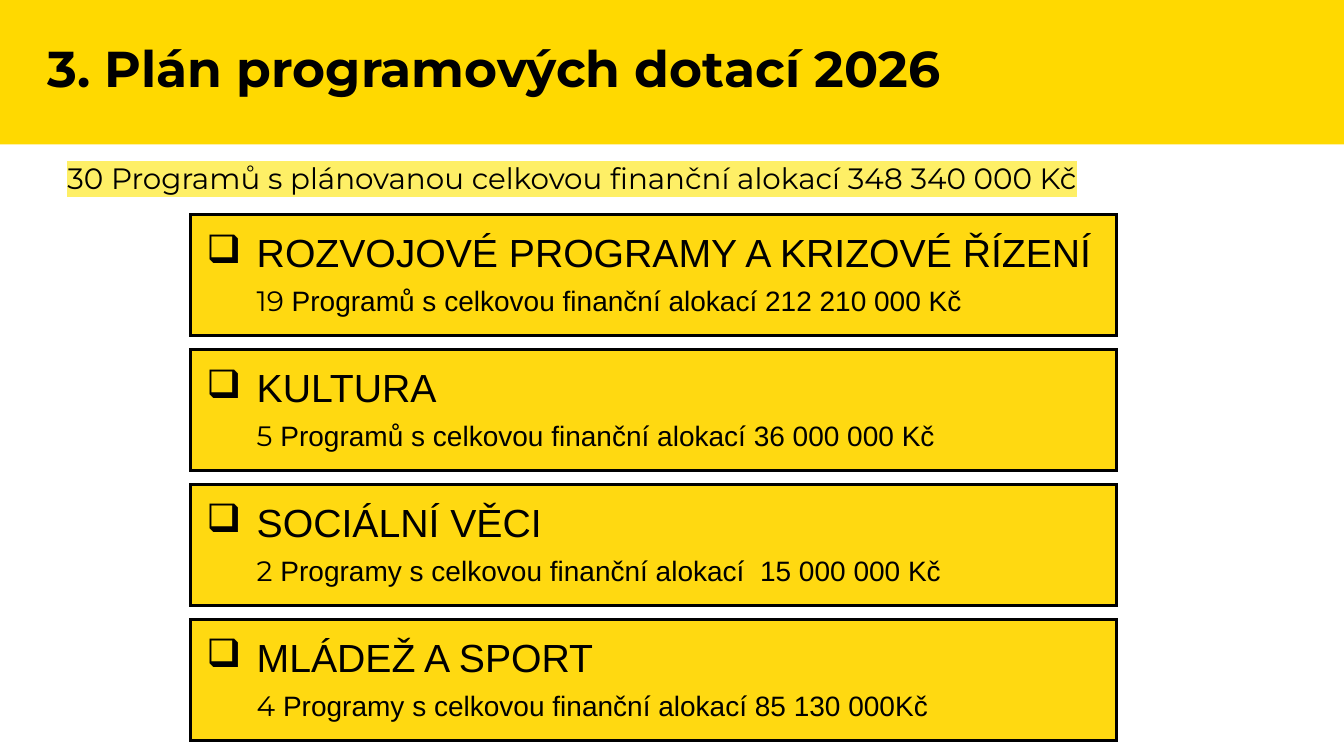
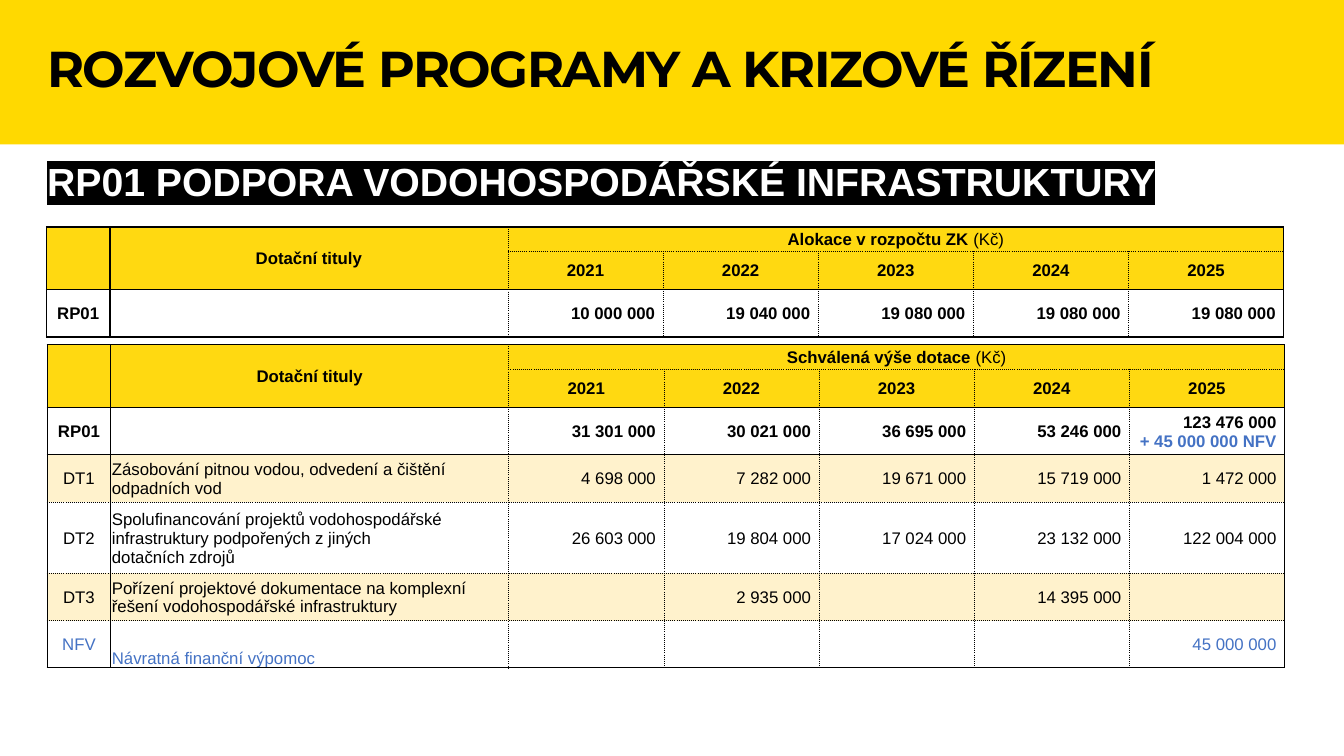
import dataclasses

import lxml.etree
import pptx
import pptx.dml.color
import pptx.enum.shapes
import pptx.enum.text
import pptx.oxml.ns
import pptx.util

Cm = pptx.util.Cm
Pt = pptx.util.Pt
qn = pptx.oxml.ns.qn
rgb = pptx.dml.color.RGBColor.from_string
Align = pptx.enum.text.PP_ALIGN
Anchor = pptx.enum.text.MSO_ANCHOR


@dataclasses.dataclass(frozen=True)
class Theme:
    band: str = "FFD900"
    panel: str = "FFD911"
    stripe: str = "FFF2CC"
    marker: str = "FEEF66"
    black: str = "000000"
    white: str = "FFFFFF"
    blue: str = "4472C4"
    display: str = "Montserrat"
    body: str = "Arial"
    title_size: float = 36
    heading_size: float = 28
    lead_size: float = 21
    detail_size: float = 20
    table_size: float = 12


theme = Theme()
SOLID, DOTTED, FINE = (1, "solid"), (0.5, "dot"), (0.25, "sysDot")
FRAME = (2.25, "solid")


def write(para, text, size=theme.table_size, font=theme.body, color=theme.black,
          bold=False, highlight=None, spacing=None):
    """Add formatted text to a paragraph; a vertical tab breaks the line."""
    for index, part in enumerate(text.split("\v")):
        if index:
            para.add_line_break()
        span = para.add_run()
        span.text = part
        span.font.size = Pt(size)
        span.font.bold = bold
        span.font.color.rgb = rgb(color)
        properties = span.font._element
        if highlight:
            mark = lxml.etree.SubElement(properties, qn("a:highlight"))
            lxml.etree.SubElement(mark, qn("a:srgbClr"), val=highlight)
        if spacing:
            properties.set("spc", str(spacing * 100))
        span.font.name = font


def style_cell(cell, fill, margins, left, right, top, bottom):
    """Set fill, margins (left, right, top, bottom in cm) and borders (points, dash)."""
    cell.fill.solid()
    cell.fill.fore_color.rgb = rgb(fill)
    cell.vertical_anchor = Anchor.MIDDLE
    (cell.margin_left, cell.margin_right,
     cell.margin_top, cell.margin_bottom) = map(Cm, margins)
    properties = cell._tc.get_or_add_tcPr()
    borders = {"L": left, "R": right, "T": top, "B": bottom}
    for index, (side, (width, dash)) in enumerate(borders.items()):
        line = lxml.etree.Element(qn("a:ln" + side), w=str(Pt(width)))
        paint = lxml.etree.SubElement(line, qn("a:solidFill"))
        lxml.etree.SubElement(paint, qn("a:srgbClr"), val=theme.black)
        lxml.etree.SubElement(line, qn("a:prstDash"), val=dash)
        properties.insert(index, line)


deck = pptx.Presentation()
deck.slide_width, deck.slide_height = Cm(33.87), Cm(19.05)

# Shared layout: title place and yellow band
layout = deck.slide_layouts[5]
title = layout.placeholders[0]
title.left, title.top, title.width, title.height = 0, 0, deck.slide_width, Cm(3.61)
title.text_frame.margin_left = Cm(1.19)
title.text_frame.vertical_anchor = Anchor.MIDDLE
title.text_frame.auto_size = pptx.enum.text.MSO_AUTO_SIZE.NONE

pages = []
for heading, spacing in (("3. Plán programových dotací 2026", None),
                         ("ROZVOJOVÉ PROGRAMY A KRIZOVÉ ŘÍZENÍ", -1)):
    page = deck.slides.add_slide(layout)
    para = page.shapes.title.text_frame.paragraphs[0]
    para.alignment = Align.LEFT
    para.line_spacing = 0.9
    write(para, heading, size=theme.title_size, font=theme.display, bold=True,
          spacing=spacing)
    pages.append(page)
overview, programme = pages

band = overview.shapes.add_shape(pptx.enum.shapes.MSO_SHAPE.RECTANGLE,
                                 0, 0, deck.slide_width, Cm(3.64))
band.shadow.inherit = False
band.fill.solid()
band.fill.fore_color.rgb = rgb(theme.band)
band.line.fill.background()
layout.shapes.element.insert(2, band.element)

# Overview of programme areas
box = overview.shapes.add_textbox(Cm(1.45), Cm(3.4), Cm(30.9), Cm(1.88))
box.text_frame.word_wrap = True
box.text_frame.vertical_anchor = Anchor.MIDDLE
para = box.text_frame.paragraphs[0]
para.line_spacing = 1.3
write(para, "30 Programů s plánovanou celkovou finanční alokací 348 340 000 Kč",
      size=theme.lead_size, font=theme.display, highlight=theme.marker)

areas = (
    ("ROZVOJOVÉ PROGRAMY A KRIZOVÉ ŘÍZENÍ", "19",
     " Programů s celkovou finanční alokací 212 210 000 Kč"),
    ("KULTURA", "5", " Programů s celkovou finanční alokací 36 000 000 Kč"),
    ("SOCIÁLNÍ VĚCI", "2", " Programy s celkovou finanční alokací  15 000 000 Kč"),
    ("MLÁDEŽ A SPORT", "4", " Programy s celkovou finanční alokací 85 130 000Kč"),
)
for index, (area, count, allocation) in enumerate(areas):
    table = overview.shapes.add_table(1, 1, Cm(4.8), Cm(5.41 + 3.4 * index),
                                      Cm(23.34), Cm(3)).table
    table.first_row = table.horz_banding = False
    cell = table.cell(0, 0)
    style_cell(cell, theme.panel, (0.4,) * 4, FRAME, FRAME, FRAME, FRAME)
    name = cell.text_frame.paragraphs[0]
    write(name, area, size=theme.heading_size)
    detail = cell.text_frame.add_paragraph()
    detail.space_before = Pt(6)
    write(detail, count, size=theme.detail_size, font=theme.display)
    write(detail, allocation, size=theme.detail_size)
    for para, indent in ((name, Cm(-1.27)), (detail, 0)):
        properties = para._p.get_or_add_pPr()
        properties.set("marL", str(Cm(1.27)))
        properties.set("indent", str(indent))
    lxml.etree.SubElement(name._p.get_or_add_pPr(), qn("a:buChar"), char="❑")

# Programme RP01
box = programme.shapes.add_textbox(0, Cm(3.66), deck.slide_width, Cm(1.88))
box.text_frame.word_wrap = True
box.text_frame.margin_left, box.text_frame.margin_top = Cm(1.19), Cm(0.3)
write(box.text_frame.paragraphs[0], "RP01 PODPORA VODOHOSPODÁŘSKÉ INFRASTRUKTURY",
      size=theme.heading_size, color=theme.white, bold=True, highlight=theme.black)

years = ("", "", "2021", "2022", "2023", "2024", "2025")
allocated = (
    ("RP01", "", "10 000 000", "19 040 000", "19 080 000", "19 080 000", "19 080 000"),
)
approved = (
    ("RP01", "", "31 301 000", "30 021 000", "36 695 000", "53 246 000",
     "123 476 000\n+ 45 000 000 NFV"),
    ("DT1", "Zásobování pitnou vodou, odvedení a čištění odpadních vod",
     "4 698 000", "7 282 000", "19 671 000", "15 719 000", "1 472 000"),
    ("DT2", "Spolufinancování projektů vodohospodářské infrastruktury "
     "podpořených z jiných \vdotačních zdrojů",
     "26 603 000", "19 804 000", "17 024 000", "23 132 000", "122 004 000"),
    ("DT3", "Pořízení projektové dokumentace na komplexní řešení "
     "vodohospodářské infrastruktury", "", "2 935 000", "", "14 395 000", ""),
    ("NFV", "Návratná finanční výpomoc", "", "", "", "", "45 000 000"),
)
column_widths = (1.6, 10.03) + (3.91,) * 5
row_heights = (0.61, 0.97, 1.19, 1.19, 1.8, 1.19, 1.19)

for caption, records, left, top in (
        ("Alokace v rozpočtu ZK ", allocated, 1.17, 5.72),
        ("Schválená výše dotace ", approved, 1.19, 8.69)):
    rows = (("", "Dotační tituly", caption, "", "", "", ""), years) + records
    heights = row_heights[:len(rows)]
    table = programme.shapes.add_table(
        len(rows), len(years), Cm(left), Cm(top),
        Cm(sum(column_widths)), Cm(sum(heights))).table
    table.first_row = table.horz_banding = False
    for column, width in zip(table.columns, column_widths):
        column.width = Cm(width)
    for row, height in zip(table.rows, heights):
        row.height = Cm(height)
    for column in (0, 1):
        table.cell(0, column).merge(table.cell(1, column))
    table.cell(0, 2).merge(table.cell(0, 6))

    rules = [SOLID, FINE, SOLID, SOLID] + [DOTTED] * (len(rows) - 3)
    rules[len(rows)] = SOLID
    for r, record in enumerate(rows):
        header, total = r < 2, r == 2
        striped = record[0] in ("DT1", "DT3")
        fill = theme.panel if header else theme.stripe if striped else theme.white
        for c, text in enumerate(record):
            cell = table.cell(r, c)
            amount = c > 1 and not header
            wide = r == 0 and c > 1
            style_cell(cell, fill, (0.03, 0.2 if amount else 0.03, 0.03, 0),
                       left=SOLID if c < 2 else DOTTED,
                       right=SOLID if c in (0, 6) or wide else DOTTED,
                       top=rules[r],
                       bottom=SOLID if r == 0 and c < 2 else rules[r + 1])
            if not text:
                continue
            for index, line in enumerate(text.split("\n")):
                frame = cell.text_frame
                para = frame.add_paragraph() if index else frame.paragraphs[0]
                para.alignment = Align.RIGHT if amount else Align.CENTER
                if c == 1 and not header:
                    para.alignment = Align.LEFT
                    para.space_before = para.space_after = Pt(2)
                    if record[0] == "NFV":
                        cell.vertical_anchor = Anchor.BOTTOM
                blue = record[0] == "NFV" or line.startswith("+")
                write(para, line, color=theme.blue if blue else theme.black,
                      bold=header or total)
    write(table.cell(0, 2).text_frame.paragraphs[0], "(Kč)")

deck.save("out.pptx")
